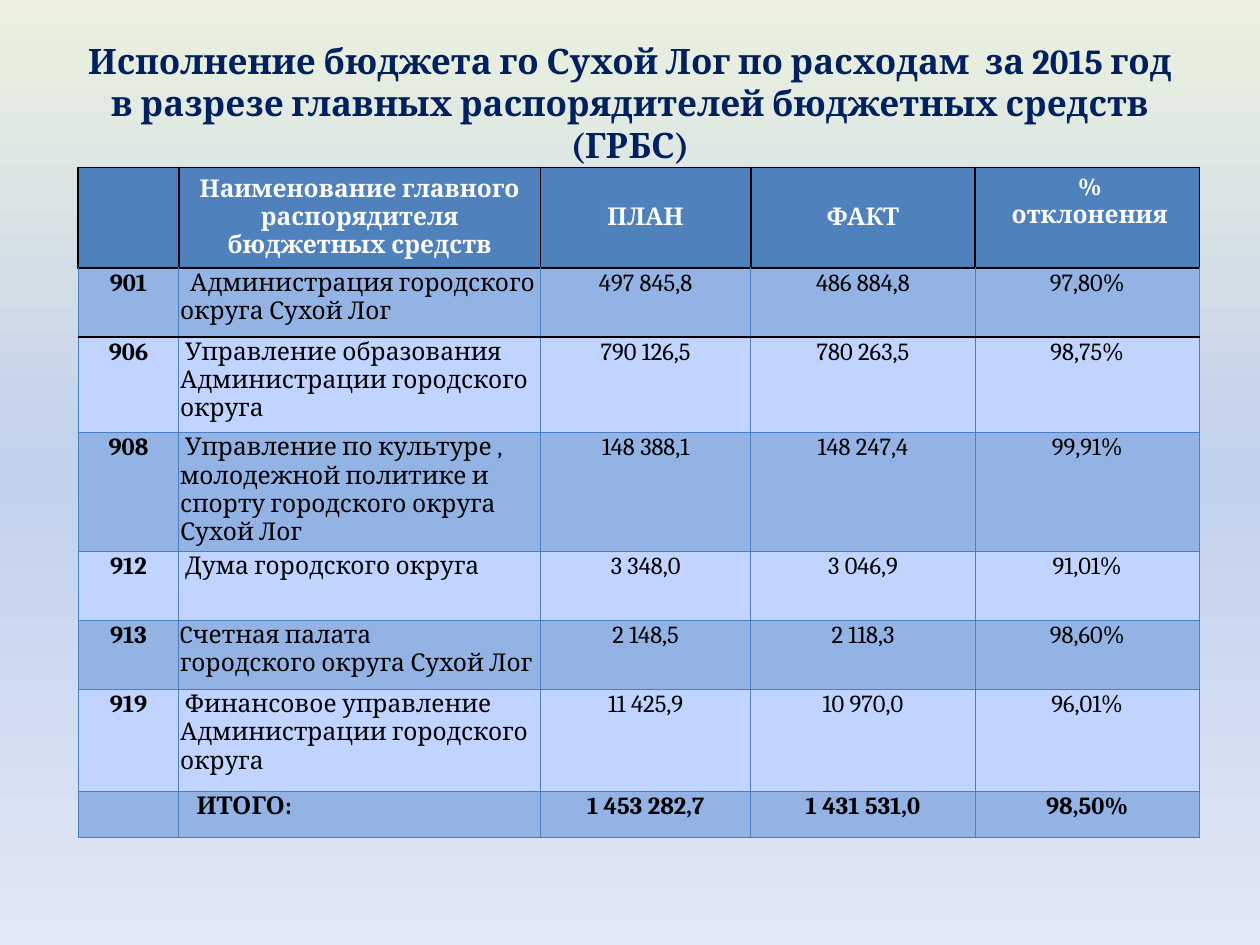
from copy import deepcopy

from lxml import etree
from pptx import Presentation
from pptx import util as u
from pptx.dml.color import RGBColor
from pptx.enum import text
from pptx.oxml.ns import qn

CENTER, LEFT = text.PP_ALIGN.CENTER, text.PP_ALIGN.LEFT
MIDDLE, TOP = text.MSO_ANCHOR.MIDDLE, text.MSO_ANCHOR.TOP
BLACK, BLUE = ("000000", 1), ("4B7EBC", 0.75)
HEADER_FILL, DARK_BAND, LIGHT_BAND = "4F81BD", "93B3E5", "C0D4FF"

COLUMNS = [8, 28.7, 16.7, 17.8, 17.8]  # per cent of the slide's width
ROWS = [10.3, 7.3, 10.1, 12.1, 7.3, 7.3, 10.8, 4.9]  # per cent of its height
HEADINGS = ["", "Наименование главного распорядителя бюджетных средств",
            "ПЛАН", "ФАКТ", "%\nотклонения"]
BUDGET = [
    ["901", "Администрация городского округа Сухой Лог", "497 845,8", "486 884,8", "97,80%"],
    ["906", "Управление образования Администрации городского округа",
     "790 126,5", "780 263,5", "98,75%"],
    ["908", "Управление по культуре , молодежной политике и спорту городского округа Сухой Лог",
     "148 388,1", "148 247,4", "99,91%"],
    ["912", "Дума городского округа", "3 348,0", "3 046,9", "91,01%"],
    ["913", "Cчетная палата\nгородского округа Сухой Лог", "2 148,5", "2 118,3", "98,60%"],
    ["919", "Финансовое управление Администрации городского округа",
     "11 425,9", "10 970,0", "96,01%"],
    ["", "ИТОГО:", "1 453 282,7", "1 431 531,0", "98,50%"],
]
NAME_INDENTS = [0.08, 0.04, 0.04, 0.04, 0, 0.04, 0.13]  # inches, first line


def rgb(value):
    return RGBColor.from_string(value)


def apply(target, values):
    for key, value in values.items():
        setattr(target, key, value)


class BudgetSlide:
    font = "Cambria"

    def __init__(self, deck):
        self.width, self.height = deck.slide_width, deck.slide_height
        self.slide = deck.slides.add_slide(deck.slide_layouts[6])

    def x(self, percent):
        return round(self.width * percent / 100)

    def y(self, percent):
        return round(self.height * percent / 100)

    def background(self, colors):
        """Fill the slide from top to bottom with evenly spaced colours."""
        fill = self.slide.background.fill
        fill.gradient()
        fill.gradient_angle = 270
        stops = self.slide.element.find(".//" + qn("a:gsLst"))
        while len(stops) < len(colors):
            stops.append(deepcopy(stops[0]))
        for i, (stop, color) in enumerate(zip(fill.gradient_stops, colors)):
            stop.color.rgb = rgb(color)
            stop.position = i / (len(colors) - 1)

    def wording(self, frame, words, size, color, bold, align=CENTER, indent=0):
        frame.word_wrap = True
        for i, line in enumerate(words.split("\n")):
            paragraph = frame.paragraphs[0] if i == 0 else frame.add_paragraph()
            paragraph.alignment = align
            if indent:
                paragraph._p.get_or_add_pPr().set("indent", str(u.Inches(indent)))
            run = paragraph.add_run()
            run.text = line
            apply(run.font, {"name": self.font, "size": u.Pt(size), "bold": bold})
            run.font.color.rgb = rgb(color)

    def title(self, words, left, top, width, height):
        box = self.slide.shapes.add_textbox(
            self.x(left), self.y(top), self.x(width), self.y(height))
        box.text_frame.vertical_anchor = MIDDLE
        self.wording(box.text_frame, words, 20, "002060", True)

    def table(self, left, top, columns, rows):
        table = self.slide.shapes.add_table(
            len(rows), len(columns), self.x(left), self.y(top),
            self.x(sum(columns)), self.y(sum(rows))).table
        apply(table, {"first_row": False, "horz_banding": False})
        for column, share in zip(table.columns, columns):
            column.width = self.x(share)
        for row, share in zip(table.rows, rows):
            row.height = self.y(share)
        return table

    def cell(self, cell, words, fill, edges, margins, anchor=TOP, **style):
        """Edges are (colour, points) pairs: left, right, top, bottom."""
        properties = cell._tc.get_or_add_tcPr()
        for side, (color, points) in zip("LRTB", edges):
            line = etree.SubElement(properties, qn("a:ln" + side), w=str(u.Pt(points)))
            solid = etree.SubElement(line, qn("a:solidFill"))
            etree.SubElement(solid, qn("a:srgbClr"), val=color)
        cell.fill.solid()
        cell.fill.fore_color.rgb = rgb(fill)
        sides = ("margin_left", "margin_top", "margin_right", "margin_bottom")
        apply(cell, dict(zip(sides, map(u.Inches, margins))))
        cell.vertical_anchor = anchor
        if words:
            self.wording(cell.text_frame, words, 14, **style)


def main():
    deck = Presentation()
    apply(deck, {"slide_width": u.Inches(10), "slide_height": u.Inches(7.5)})
    page = BudgetSlide(deck)
    page.background(["EBF1DE", "C2D1ED", "E1E8F5"])
    page.title("Исполнение бюджета го Сухой Лог по расходам  за 2015 год "
               "в разрезе главных распорядителей бюджетных средств (ГРБС)", 5, 4, 90, 13.7)
    table = page.table(6.2, 17.7, COLUMNS, ROWS)

    for c, heading in enumerate(HEADINGS):
        two_lines = "\n" in heading
        page.cell(table.cell(0, c), heading, HEADER_FILL, [BLACK] * 4,
                  (0.1, 0.05, 0.1, 0.05), TOP if two_lines else MIDDLE,
                  color="FFFFFF", bold=True, indent=0.04 if two_lines else 0)

    for r, (record, indent) in enumerate(zip(BUDGET, NAME_INDENTS), 1):
        total = r == len(BUDGET)
        edges = [BLUE, BLUE, BLACK if r <= 2 else BLUE, BLACK if r == 1 else BLUE]
        for c, value in enumerate(record):
            is_name = c == 1
            page.cell(table.cell(r, c), value, DARK_BAND if r % 2 else LIGHT_BAND,
                      edges, (0.01, 0.01, 0.01, 0), color="000000",
                      bold=total or c == 0, align=LEFT if is_name else CENTER,
                      indent=indent if is_name else 0)
    deck.save("out.pptx")


if __name__ == "__main__":
    main()
